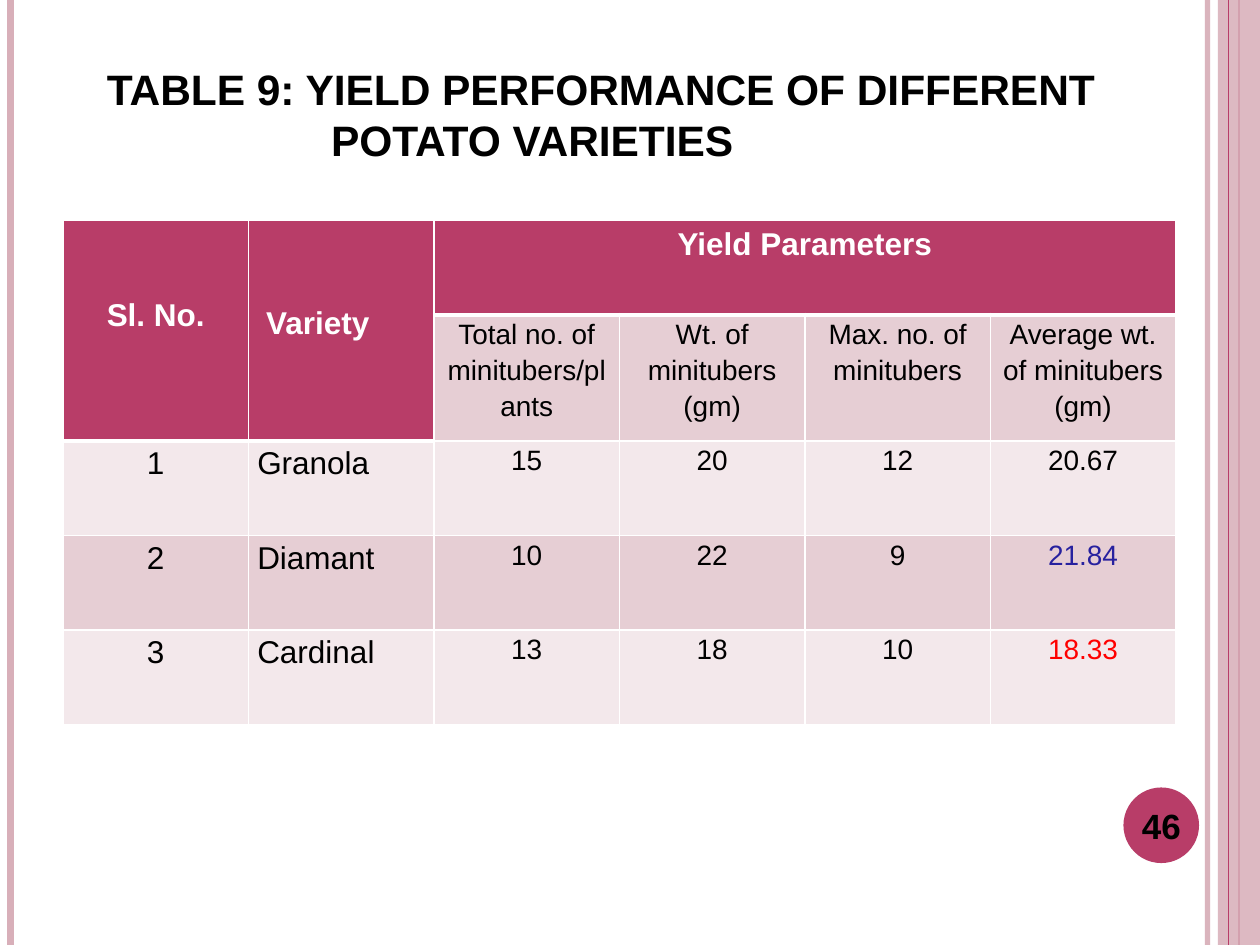
from lxml.etree import SubElement
from pptx import Presentation
from pptx.dml.color import RGBColor
from pptx.enum.shapes import MSO_CONNECTOR as CONN, MSO_SHAPE as SHAPE
from pptx.enum.text import MSO_ANCHOR as ANCHOR, PP_ALIGN as ALIGN
from pptx.oxml.ns import qn
from pptx.util import Inches, Pt

COLORS = {"white": "FFFFFF", "black": "000000", "berry": "B83D68", "rose": "D8AFB9",
          "band": "E6CED4", "pale": "F3E8EB", "blue": "27219F", "red": "FF0000"}
COLS, ROWS = 120, 90
HEAD = {"size": 18, "bold": True, "color": "white"}
LABEL = {"size": 18}
VALUE = {"size": 16}
VARIETIES = [("1", "Granola", "15", "20", "12", "20.67", "black"),
             ("2", "Diamant", "10", "22", "9", "21.84", "blue"),
             ("3", "Cardinal", "13", "18", "10", "18.33", "red")]
PARAMETERS = [["Total no. of minitubers/plants"], ["Wt. of minitubers", "(gm)"],
              ["Max. no. of minitubers"], ["Average wt. of minitubers", "(gm)"]]


def rgb(name):
    """Return the named colour."""
    return RGBColor.from_string(COLORS[name])


def grid(*units):
    """Turn grid columns or rows into lengths of a twelfth of an inch each."""
    return [Inches(u / 12) for u in units]


def set_alpha(fill_el, percent):
    """Make a solid fill element partly transparent."""
    SubElement(fill_el[0], qn("a:alpha"), val=str(percent * 1000))


def add_rule(s, col, color, width, alpha=None):
    """Draw a vertical line over the full slide height."""
    line = s.shapes.add_connector(CONN.STRAIGHT, *grid(col, 0, col, ROWS))
    line.line.color.rgb = rgb(color)
    line.line.width = Pt(width)
    sp_pr = line._element.spPr
    if alpha:
        set_alpha(sp_pr.find(".//" + qn("a:solidFill")), alpha)
    SubElement(sp_pr, qn("a:effectLst"))


def add_block(s, kind, box, color, alpha=None):
    """Draw a filled shape without outline."""
    sp = s.shapes.add_shape(kind, *grid(*box))
    sp.shadow.inherit = False
    sp.fill.solid()
    sp.fill.fore_color.rgb = rgb(color)
    sp.line.fill.background()
    if alpha:
        set_alpha(sp._element.spPr.find(qn("a:solidFill")), alpha)


def write(tf, lines, size, bold=False, color="black", **para):
    """Write one paragraph per line with shared font and paragraph values."""
    for i, text in enumerate(lines):
        p = tf.add_paragraph() if i else tf.paragraphs[0]
        r = p.add_run()
        r.text = text
        r.font.color.rgb = rgb(color)
        for key, value in {"name": "Arial", "size": Pt(size), "bold": bold}.items():
            setattr(r.font, key, value)
        for key, value in para.items():
            setattr(p, key, value)


def add_text(s, box, lines, anchor, **style):
    """Add a wrapping text box."""
    tf = s.shapes.add_textbox(*grid(*box)).text_frame
    frame = {"word_wrap": True, "vertical_anchor": anchor, "margin_top": 0, "margin_bottom": 0}
    for key, value in frame.items():
        setattr(tf, key, value)
    write(tf, lines, **style)
    return tf


def style_cell(cell, fill, bottom):
    """Give a cell white borders and a fill."""
    tc_pr = cell._tc.get_or_add_tcPr()
    for side, width in {"L": 1, "R": 1, "T": 1, "B": bottom}.items():
        ln = SubElement(tc_pr, qn(f"a:ln{side}"), w=str(Pt(width)))
        SubElement(SubElement(ln, qn("a:solidFill")), qn("a:srgbClr"), val=COLORS["white"])
    cell.fill.solid()
    cell.fill.fore_color.rgb = rgb(fill)


def fill_cell(cell, lines, style, align=ALIGN.CENTER, top=0, left=0.07, spacing=1.15):
    """Set a cell's margins and text."""
    margins = {"margin_left": left, "margin_right": 0.07, "margin_top": top, "margin_bottom": 0}
    for key, value in margins.items():
        setattr(cell, key, Inches(value))
    write(cell.text_frame, lines, **style, alignment=align, line_spacing=spacing)


def add_yield_table(s):
    """Build the table of yield parameters per variety."""
    t = s.shapes.add_table(5, 6, *grid(6, 21, 106, 48)).table
    t.first_row = t.horz_banding = False
    for col in t.columns:
        col.width = grid(106 / 6)[0]
    for row, height in zip(t.rows, (9, 12, 9, 9, 9)):
        row.height = grid(height)[0]
    for i in range(5):
        for j in range(6):
            header = i == 0 or (i == 1 and j < 2)
            fill = "berry" if header else "band" if i % 2 else "pale"
            style_cell(t.cell(i, j), fill, 3 if header else 1)
    for start, end in (((0, 0), (1, 0)), ((0, 1), (1, 1)), ((0, 2), (0, 5))):
        t.cell(*start).merge(t.cell(*end))
    fill_cell(t.cell(0, 0), ["Sl. No."], HEAD, top=0.57)
    fill_cell(t.cell(0, 1), ["Variety"], HEAD, ALIGN.LEFT, top=0.64, left=0.14)
    fill_cell(t.cell(0, 2), ["Yield Parameters"], HEAD, top=0.05, spacing=1)
    for j, lines in enumerate(PARAMETERS, 2):
        fill_cell(t.cell(1, j), lines, VALUE)
    for i, (number, variety, *values, color) in enumerate(VARIETIES, 2):
        fill_cell(t.cell(i, 0), [number], LABEL)
        fill_cell(t.cell(i, 1), [variety], LABEL, ALIGN.JUSTIFY)
        for j, value in enumerate(values, 2):
            fill_cell(t.cell(i, j), [value], {**VALUE, "color": color if j == 5 else "black"})


def main():
    """Build the slide and save it."""
    prs = Presentation()
    prs.slide_width, prs.slide_height = grid(COLS, ROWS)
    s = prs.slides.add_slide(prs.slide_layouts[6])
    add_rule(s, 115, "rose", 3, 93)
    add_rule(s, 1, "rose", 4.5)
    add_rule(s, 118, "berry", 1.5)
    add_block(s, SHAPE.RECTANGLE, (116, 0, 4, ROWS), "rose", 87)
    add_rule(s, 117, "berry", 0.75)
    add_block(s, SHAPE.OVAL, (107, 75, 7.2, 7.2), "berry")
    title = ["TABLE 9: YIELD PERFORMANCE OF DIFFERENT", "POTATO VARIETIES"]
    tf = add_text(s, (9, 6, 105, 10), title, ANCHOR.TOP, size=24.3, bold=True,
                  line_spacing=Pt(29))
    tf.paragraphs[1]._p.get_or_add_pPr().set("marL", str(Inches(1.78)))
    add_yield_table(s)
    add_text(s, (106.6, 75.2, 8, 6.8), ["46"], ANCHOR.MIDDLE, size=20, bold=True,
             alignment=ALIGN.CENTER)
    prs.save("out.pptx")


if __name__ == "__main__":
    main()
